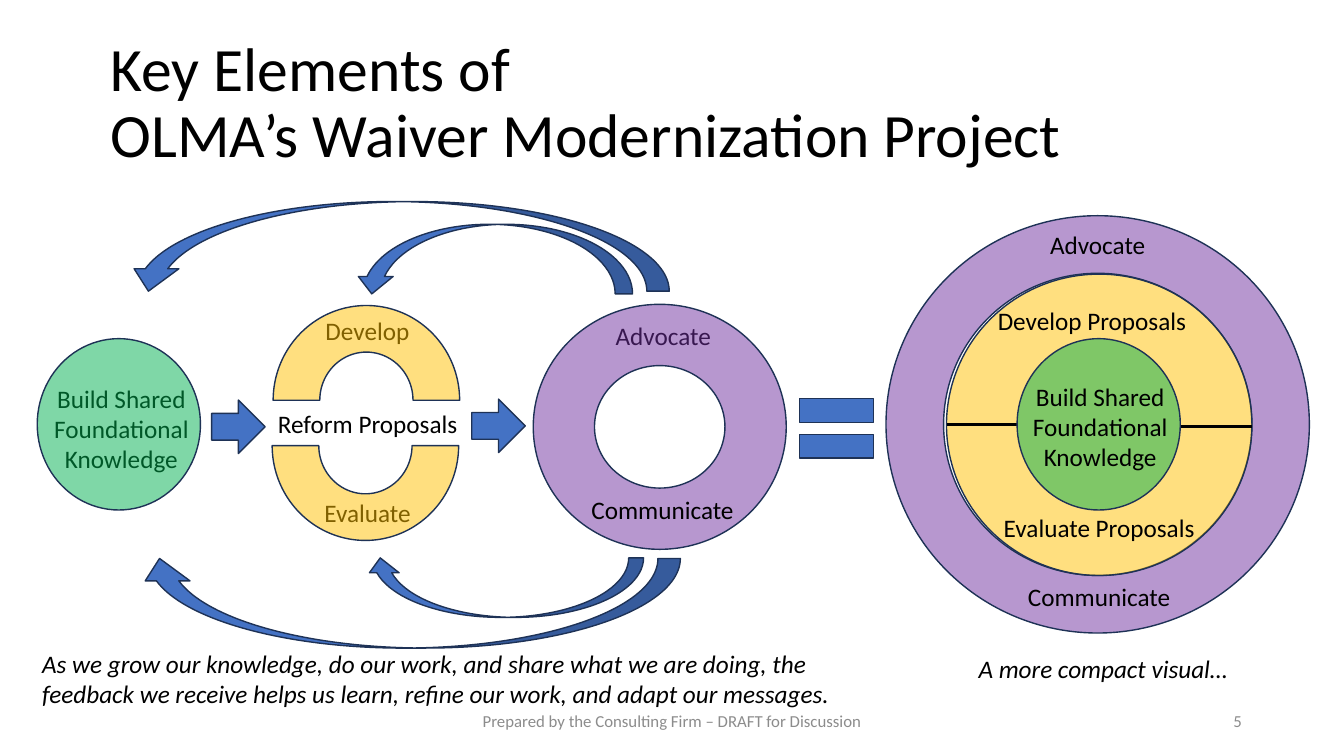
from collections import namedtuple

from lxml import etree
from pptx import Presentation
from pptx.dml.color import RGBColor
from pptx.enum.shapes import MSO_CONNECTOR, MSO_SHAPE as Preset
from pptx.enum.text import MSO_ANCHOR as Anchor, PP_ALIGN as Align
from pptx.oxml.ns import qn
from pptx.util import Pt

Box = namedtuple("Box", "left top width height")

PURPLE, GOLD, GREEN = "7030A0", "FFC000", "00B050"
BLUE, OUTLINE, BLACK, GREY = "4472C4", "1E3256", "000000", "8C8C8C"
KNOWLEDGE_SIZE = (116.6, 122.4)
LINE_HEIGHT = 28.8


def color(hex_string):
    return RGBColor.from_string(hex_string)


def inside(box, left, top, width, height):
    """Turn a place relative to box into a place on the slide."""
    return Box(box.left + left, box.top + top, width, height)


def add_text(slide, box, text, size=18, ink=BLACK, align=Align.LEFT,
             anchor=Anchor.TOP, wrap=False, italic=False, spacing=None):
    shape = slide.shapes.add_textbox(*map(Pt, box))
    text_frame = shape.text_frame
    text_frame.word_wrap = wrap
    text_frame.vertical_anchor = anchor
    text_frame.text = text
    for paragraph in text_frame.paragraphs:
        paragraph.alignment = align
        paragraph.line_spacing = spacing
        for run in paragraph.runs:
            run.font.name = "Calibri"
            run.font.size = Pt(size)
            run.font.italic = italic
            run.font.color.rgb = color(ink)


def add_preset(slide, preset, box, fill=BLUE, alpha=None, rotation=0, flip=False):
    shape = slide.shapes.add_shape(preset, *map(Pt, box))
    shape.shadow.inherit = False
    shape.rotation = rotation
    shape.fill.solid()
    shape.fill.fore_color.rgb = color(fill)
    shape.line.color.rgb = color(OUTLINE)
    shape.line.width = Pt(1)
    properties = shape._element.spPr
    if alpha:
        fill_color = properties.find(qn("a:solidFill")).find(qn("a:srgbClr"))
        etree.SubElement(fill_color, qn("a:alpha")).set("val", str(alpha * 1000))
    if flip:
        properties.find(qn("a:xfrm")).set("flipH", "1")
    return shape


def add_divider(slide, left, right, y):
    line = slide.shapes.add_connector(
        MSO_CONNECTOR.STRAIGHT, Pt(left), Pt(y), Pt(right), Pt(y))
    line.line.color.rgb = color(BLACK)
    line.line.width = Pt(2)
    etree.SubElement(line._element.spPr, qn("a:effectLst"))


def add_process(slide, box):
    """Three stages from left to right; the tinted labels lie behind the rings."""
    add_text(slide, inside(box, 0.7, 125, 172, 72.7),
             "Build Shared Foundational Knowledge", align=Align.CENTER, wrap=True)
    for text, left, top, width in (
            ("Develop", 225.4, 76.8, 74.9),
            ("Evaluate", 224.6, 206.4, 77),
            ("Reform Proposals", 191.5, 143, 144),
            ("Advocate", 432.7, 80.4, 83.5)):
        add_text(slide, inside(box, left, top, width, LINE_HEIGHT), text)

    for preset, place, fill, rotation in (
            (Preset.BLOCK_ARC, (195.1, 73.2, 133.2, 135.4), GOLD, 0),
            (Preset.DONUT, (380.9, 72.4, 180.7, 175), PURPLE, 0),
            (Preset.OVAL, (26.6, 96.9, *KNOWLEDGE_SIZE), GREEN, 0),
            (Preset.BLOCK_ARC, (194.4, 105.6, 133.2, 135.4), GOLD, 180)):
        add_preset(slide, preset, inside(box, *place), fill, 50, rotation)
    add_text(slide, inside(box, 415.4, 204.9, 117.4, LINE_HEIGHT), "Communicate")

    for left, top in ((151.2, 140.8), (337, 140.1)):
        add_preset(slide, Preset.RIGHT_ARROW, inside(box, left, top, 38.2, 38.2))


def add_feedback(slide, box):
    """Arrows that lead back from the last stage, above and below the process."""
    for left, top, width, height, flip in (
            (252, -163, 64, 388, False),
            (327.6, -59.3, 49.7, 198.7, False),
            (339.1, 175.4, 42.5, 198.7, True),
            (260, 91.9, 64, 388, True)):
        add_preset(slide, Preset.CURVED_RIGHT_ARROW,
                   inside(box, left, top, width, height), rotation=90, flip=flip)


def add_compact_visual(slide, box):
    """The three stages as nested circles."""
    ring = add_preset(slide, Preset.DONUT, box, PURPLE, 50)
    ring.adjustments[0] = 0.138
    proposals = inside(box, 43.2, 41.7, 218.2, 215.3)
    knowledge = inside(box, 93.6, 87.8, *KNOWLEDGE_SIZE)
    add_preset(slide, Preset.OVAL, proposals, GOLD, 50)
    add_divider(slide, proposals.left, knowledge.left, box.top + 149)
    add_divider(slide, knowledge.left + knowledge.width,
                proposals.left + proposals.width, box.top + 150.5)
    add_preset(slide, Preset.OVAL, knowledge, GREEN, 50)
    for text, left, top, width in (
            ("Advocate", 110.1, 6.5, 83.5),
            ("Communicate", 94.3, 257.7, 117.4),
            ("Develop Proposals", 72.7, 60.5, 157.7),
            ("Evaluate Proposals", 77, 208.1, 152)):
        add_text(slide, inside(box, left, top, width, LINE_HEIGHT), text)
    add_text(slide, inside(box, 97.2, 114.5, 111.6, 72.7),
             "Build Shared\nFoundational\nKnowledge", align=Align.CENTER)


def add_captions(slide, box):
    add_text(slide, inside(box, 0, 0, 609.8, 51.1),
             "As we grow our knowledge, do our work, and share what we are doing, "
             "the feedback we receive helps us learn, refine our work, and adapt "
             "our messages.", wrap=True, italic=True)
    add_text(slide, inside(box, 668.9, 3.6, 227.5, LINE_HEIGHT),
             "A more compact visual…", wrap=True, italic=True)


def add_footer(slide, box):
    style = {"size": 12, "ink": GREY, "anchor": Anchor.MIDDLE, "wrap": True}
    add_text(slide, inside(box, 0, 0, 324, box.height),
             "Prepared by the Consulting Firm – DRAFT for Discussion",
             align=Align.CENTER, **style)
    add_text(slide, inside(box, 360, 0, 216, box.height), "5",
             align=Align.RIGHT, **style)


def main():
    presentation = Presentation()
    presentation.slide_width, presentation.slide_height = Pt(960), Pt(540)
    slide = presentation.slides.add_slide(presentation.slide_layouts[6])

    add_text(slide, Box(72, 22.3, 828, 104.4),
             "Key Elements of\vOLMA’s Waiver Modernization Project",
             size=44, anchor=Anchor.MIDDLE, wrap=True, spacing=0.9)
    add_footer(slide, Box(318.2, 500.4, 576, LINE_HEIGHT))
    process_box = Box(0, 145, 562, 322)
    add_process(slide, process_box)
    add_compact_visual(slide, Box(632.9, 154.1, 302.4, 298.1))
    add_preset(slide, Preset.MATH_EQUAL, Box(561.6, 270, 72, 72))
    add_feedback(slide, process_box)
    add_captions(slide, Box(23, 459.4, 896.4, 51.1))

    presentation.save("out.pptx")


if __name__ == "__main__":
    main()
